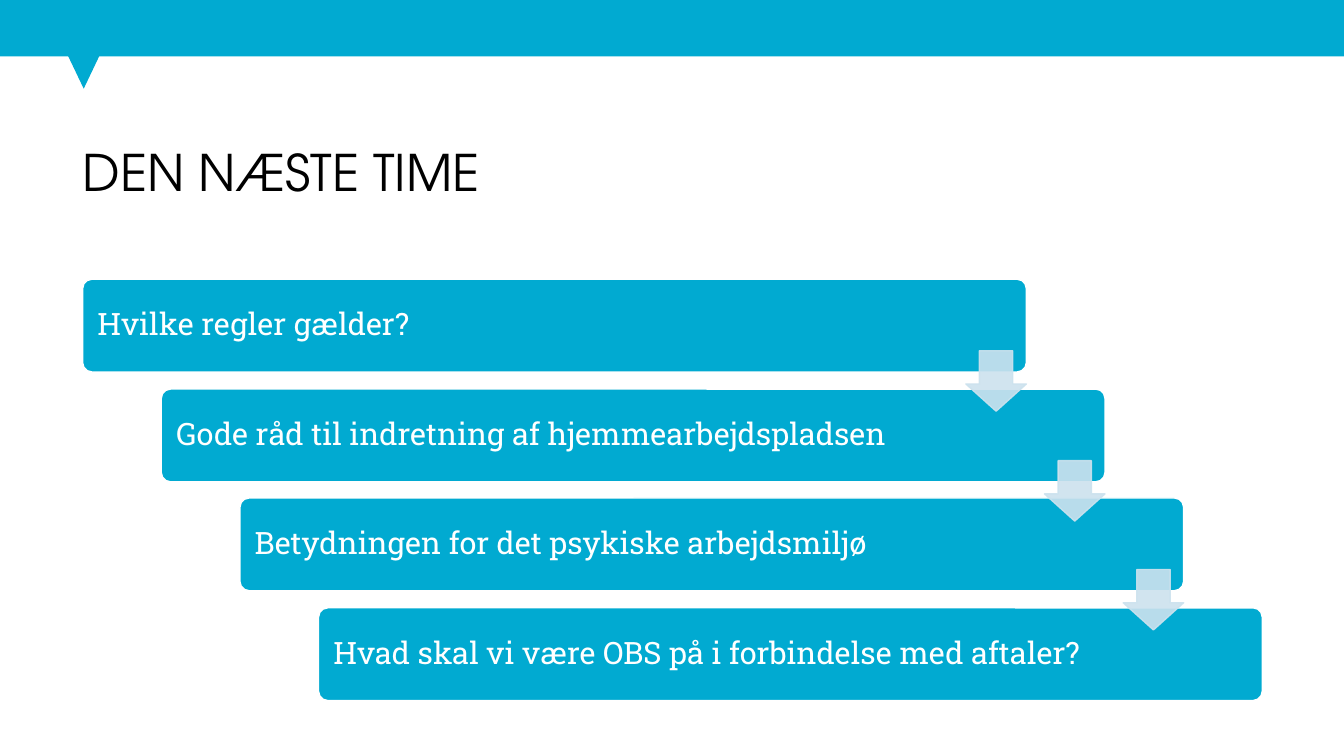
"""Build the agenda slide with a staircase of four steps joined by arrows."""
from dataclasses import dataclass

from pptx import Presentation
from pptx.dml.color import RGBColor
from pptx.enum.shapes import MSO_SHAPE as Shape
from pptx.enum.text import MSO_ANCHOR as Anchor, PP_ALIGN as Align
from pptx.oxml.ns import qn
from pptx.oxml.xmlchemy import OxmlElement
from pptx.util import Emu, Pt

PX = 9144


@dataclass(frozen=True)
class Theme:
    accent: str = "01AAD1"
    arrow: str = "CCE2EE"
    white: str = "FFFFFF"
    black: str = "000000"
    title_font: str = "TeX Gyre Adventor"
    body_font: str = "Roboto Slab"
    title_size: int = 36
    body_size: int = 22


class Deck:
    def __init__(self, theme, width, height):
        self.theme = theme
        self.prs = Presentation()
        self.prs.slide_width, self.prs.slide_height = Emu(width * PX), Emu(height * PX)
        self.slide = self.prs.slides.add_slide(self.prs.slide_layouts[6])

    def shape(self, kind, box, fill, line=None, adj=(), opacity=100):
        sp = self.slide.shapes.add_shape(kind, *(Emu(v * PX) for v in box))
        sp.shadow.inherit = False
        for i, value in enumerate(adj):
            sp.adjustments[i] = value
        sp.fill.solid()
        sp.fill.fore_color.rgb = RGBColor.from_string(fill)
        if line:
            sp.line.color.rgb = RGBColor.from_string(line)
            sp.line.width = Pt(1)
        else:
            sp.line.fill.background()
        if opacity < 100:
            for color in sp._element.spPr.iter(qn("a:srgbClr")):
                alpha = OxmlElement("a:alpha")
                alpha.set("val", str(opacity * 1000))
                color.append(alpha)
        return sp

    def label(self, sp, text, font, size, color, anchor, inset=0):
        tf = sp.text_frame
        tf.word_wrap = True
        tf.vertical_anchor = anchor
        tf.margin_left = tf.margin_right = Emu(inset * PX)
        tf.margin_top = tf.margin_bottom = Emu(inset * PX)
        p = tf.paragraphs[0]
        p.alignment = Align.LEFT
        p.line_spacing = 0.9
        r = p.add_run()
        r.text = text
        r.font.name, r.font.size = font, Pt(size)
        r.font.color.rgb = RGBColor.from_string(color)

    def banner(self):
        self.shape(Shape.RECTANGLE, (0, 0, 1333, 56), self.theme.accent)
        pointer = self.shape(Shape.ISOSCELES_TRIANGLE, (62, 44, 42, 44), self.theme.accent)
        pointer.rotation = 180

    def title(self, text):
        t = self.theme
        sp = self.slide.shapes.add_textbox(*(Emu(v * PX) for v in (82, 147, 1170, 109)))
        self.label(sp, text, t.title_font, t.title_size, t.black, Anchor.TOP)

    def step(self, x, y, text):
        t = self.theme
        sp = self.shape(Shape.ROUNDED_RECTANGLE, (x, y, 936, 92), t.accent, t.white, (0.1,))
        self.label(sp, text, t.body_font, t.body_size, t.white, Anchor.MIDDLE, 12)

    def arrow(self, x, y):
        color = self.theme.arrow
        self.shape(Shape.DOWN_ARROW, (x, y, 60, 60), color, color, (0.55, 0.45), 90)


def main():
    deck = Deck(Theme(), 1333, 750)
    deck.banner()
    deck.title("DEN NÆSTE TIME")
    steps = [
        "Hvilke regler gælder?",
        "Gode råd til indretning af hjemmearbejdspladsen",
        "Betydningen for det psykiske arbejdsmiljø",
        "Hvad skal vi være OBS på i forbindelse med aftaler?",
    ]
    places = [(82 + 78 * i, 277 + round(i * 326 / 3)) for i in range(len(steps))]
    for (x, y), text in zip(places, steps):
        deck.step(x, y, text)
    for x, y in places[:-1]:
        deck.arrow(x + 876, y + 71)
    deck.prs.save("out.pptx")


if __name__ == "__main__":
    main()
